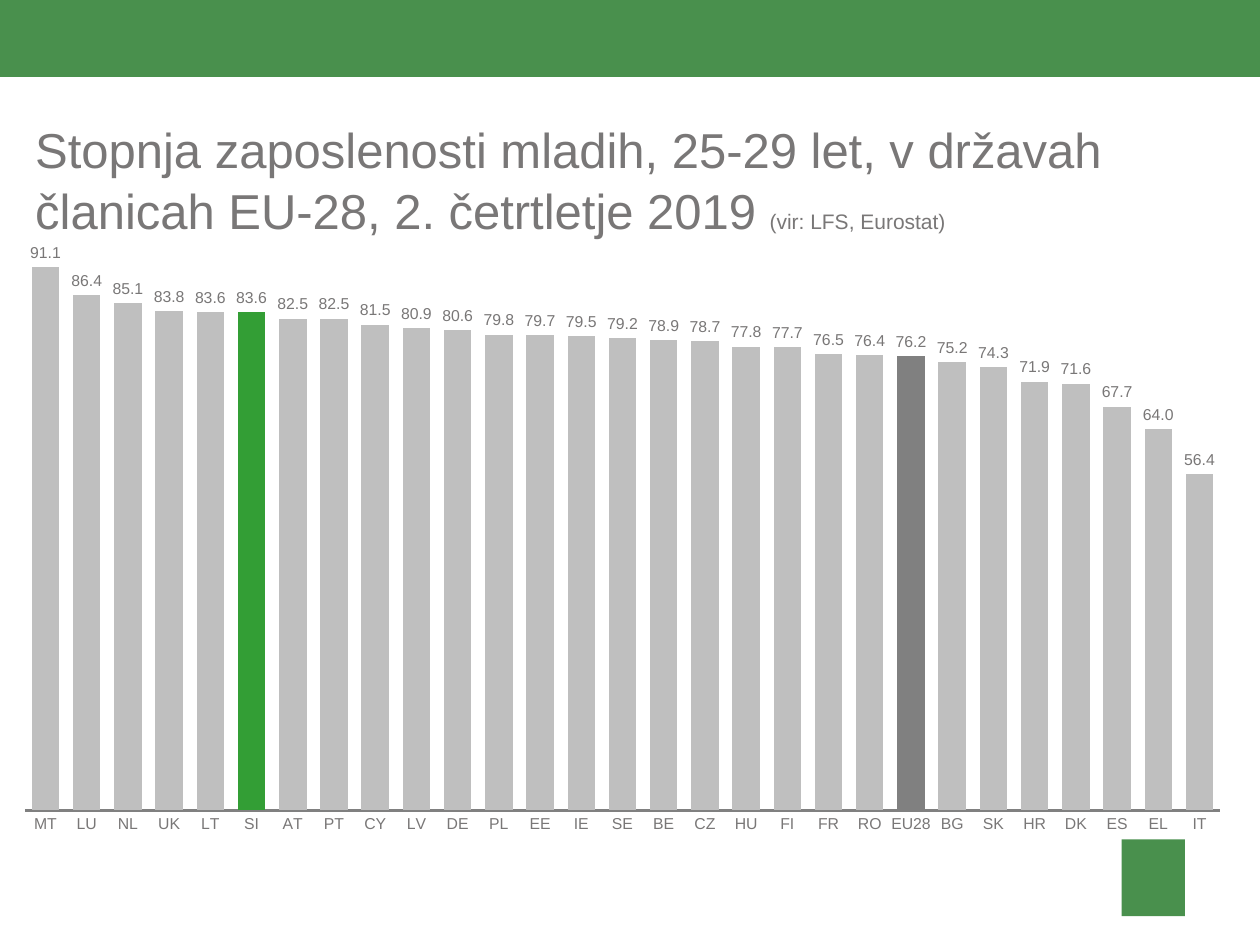
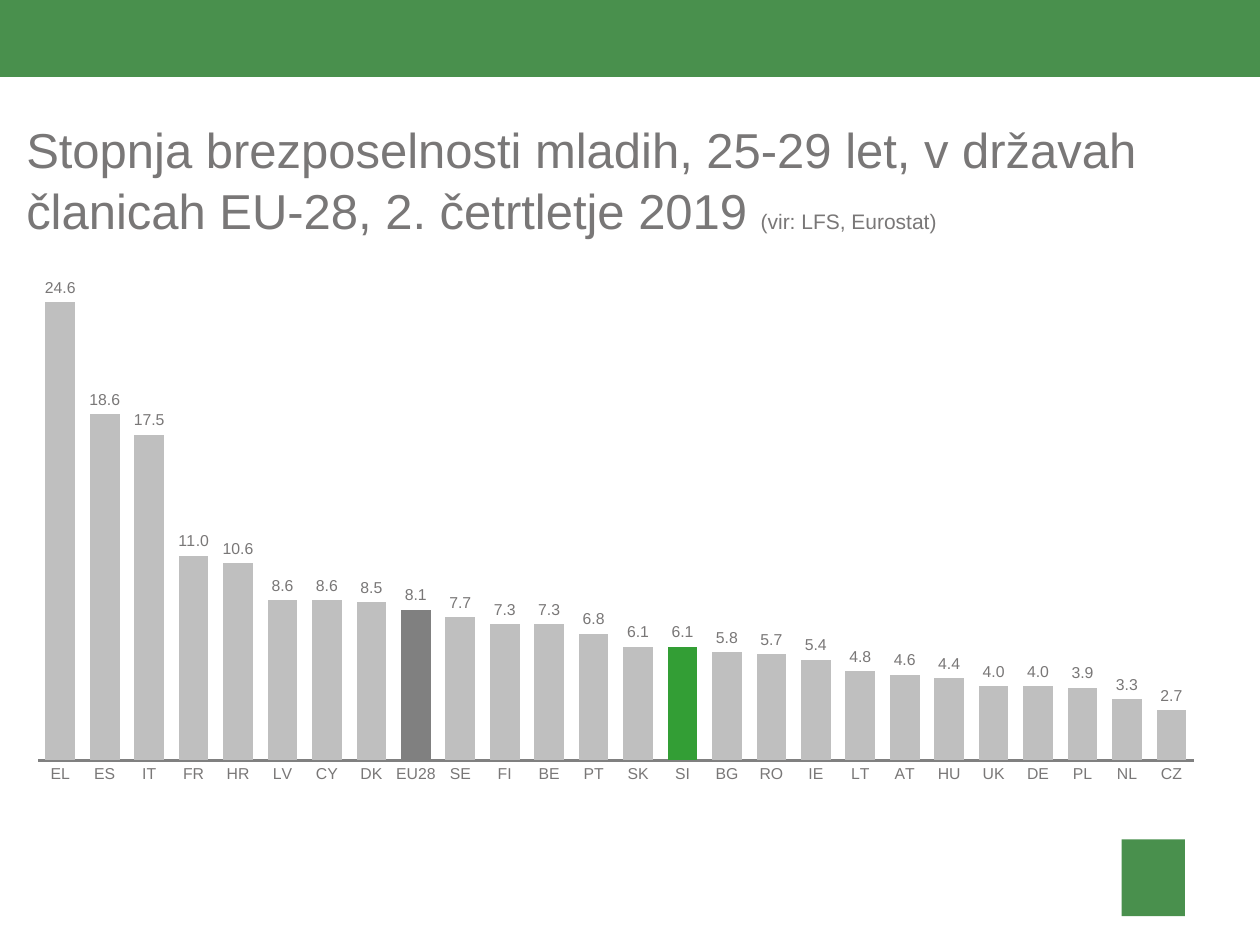
from collections import namedtuple

from pptx import Presentation
from pptx.chart.data import CategoryChartData
from pptx.dml.color import RGBColor
from pptx.enum.chart import XL_CHART_TYPE, XL_LABEL_POSITION, XL_TICK_LABEL_POSITION, XL_TICK_MARK
from pptx.enum.shapes import MSO_SHAPE
from pptx.enum.text import MSO_ANCHOR, MSO_AUTO_SIZE, PP_ALIGN
from pptx.oxml import parse_xml
from pptx.oxml.ns import nsdecls
from pptx.util import Cm, Pt

Box = namedtuple("Box", "left top width height")

FONT = "Arial"
BRAND_GREEN = "49904D"
TEXT_GREY = "797777"
BAR_GREY = "BFBFBF"
AXIS_GREY = "808080"
HIGHLIGHTS = {"SI": "339E35", "EU28": "808080"}
NUMBER_FORMAT = "#,##0.0"
SOURCE = "(vir: LFS, Eurostat)"
BAND_BOX = Box(0, -0.03, 25.4, 1.58)
EMBLEM_BOX = Box(22.61, 16.92, 1.28, 1.55)

EMPLOYMENT = {
    "MT": 91.1, "LU": 86.4, "NL": 85.1, "UK": 83.8, "LT": 83.6, "SI": 83.6,
    "AT": 82.5, "PT": 82.5, "CY": 81.5, "LV": 80.9, "DE": 80.6, "PL": 79.8,
    "EE": 79.7, "IE": 79.5, "SE": 79.2, "BE": 78.9, "CZ": 78.7, "HU": 77.8,
    "FI": 77.7, "FR": 76.5, "RO": 76.4, "EU28": 76.2, "BG": 75.2, "SK": 74.3,
    "HR": 71.9, "DK": 71.6, "ES": 67.7, "EL": 64.0, "IT": 56.4,
}
UNEMPLOYMENT = {
    "EL": 24.6, "ES": 18.6, "IT": 17.5, "FR": 11.0, "HR": 10.6, "LV": 8.6,
    "CY": 8.6, "DK": 8.5, "EU28": 8.1, "SE": 7.7, "FI": 7.3, "BE": 7.3,
    "PT": 6.8, "SK": 6.1, "SI": 6.1, "BG": 5.8, "RO": 5.7, "IE": 5.4,
    "LT": 4.8, "AT": 4.6, "HU": 4.4, "UK": 4.0, "DE": 4.0, "PL": 3.9,
    "NL": 3.3, "CZ": 2.7,
}


def color(hex_code):
    """Turn a hex string into a colour."""
    return RGBColor.from_string(hex_code)


def lengths(box):
    """Turn a box in centimetres into lengths."""
    return [Cm(value) for value in box]


def style_font(font, size):
    """Apply the shared typeface and text colour at the given size."""
    font.name = FONT
    font.size = Pt(size)
    font.color.rgb = color(TEXT_GREY)


def add_layout_block(page, layout, box, kind, number):
    """Draw a green block and move it to the layout, behind its placeholders."""
    block = page.shapes.add_shape(kind, *lengths(box))
    block.shadow.inherit = False
    block.fill.solid()
    block.fill.fore_color.rgb = color(BRAND_GREEN)
    block.line.fill.background()
    block.element.nvSpPr.cNvPr.id = number
    layout.shapes.element.insert(2, block.element)


def fill_title(page, box, heading):
    """Place the title and write the heading with its small source note."""
    title = page.shapes.title
    title.left, title.top, title.width, title.height = lengths(box)
    frame = title.text_frame
    frame.word_wrap = True
    frame.auto_size = MSO_AUTO_SIZE.NONE
    frame.vertical_anchor = MSO_ANCHOR.TOP
    frame.margin_left = frame.margin_right = frame.margin_top = frame.margin_bottom = 0
    para = frame.paragraphs[0]
    para.alignment = PP_ALIGN.LEFT
    para.line_spacing = 1.05
    for text, size in ((heading + " ", 28), (SOURCE, 12)):
        span = para.add_run()
        span.text = text
        style_font(span.font, size)


def set_plot_layout(chart, plot_box):
    """Fix the inner plot area as fractions of the chart."""
    area = chart.element.xpath(".//c:plotArea")[0]
    for existing in area.xpath("./c:layout"):
        area.remove(existing)
    places = "".join(
        f'<c:{tag} val="{value}"/>' for tag, value in zip(("x", "y", "w", "h"), plot_box)
    )
    area.insert(0, parse_xml(
        f'<c:layout {nsdecls("c")}><c:manualLayout><c:layoutTarget val="inner"/>'
        f'<c:xMode val="edge"/><c:yMode val="edge"/>{places}</c:manualLayout></c:layout>'
    ))


def style_axes(chart, maximum):
    """Show only the country names and the base line."""
    countries, rates = chart.category_axis, chart.value_axis
    for axis in (countries, rates):
        axis.has_major_gridlines = False
        axis.major_tick_mark = axis.minor_tick_mark = XL_TICK_MARK.NONE
    style_font(countries.tick_labels.font, 9)
    countries.format.line.color.rgb = color(AXIS_GREY)
    countries.format.line.width = Pt(1.5)
    rates.minimum_scale, rates.maximum_scale = 0, maximum
    rates.tick_labels.number_format = NUMBER_FORMAT
    rates.tick_labels.number_format_is_linked = False
    rates.tick_label_position = XL_TICK_LABEL_POSITION.NONE
    rates.format.line.fill.background()


def style_bars(chart, countries):
    """Colour the bars, pick out the highlighted ones and label their values."""
    plot = chart.plots[0]
    plot.gap_width = 50
    plot.vary_by_categories = False
    series = plot.series[0]
    series.format.fill.solid()
    series.format.fill.fore_color.rgb = color(BAR_GREY)
    for index, country in enumerate(countries):
        if country in HIGHLIGHTS:
            fill = series.points[index].format.fill
            fill.solid()
            fill.fore_color.rgb = color(HIGHLIGHTS[country])
    labels = series.data_labels
    labels.show_value = True
    labels.number_format = NUMBER_FORMAT
    labels.number_format_is_linked = False
    labels.position = XL_LABEL_POSITION.OUTSIDE_END
    style_font(labels.font, 9)


def add_rate_chart(page, box, rates, maximum, plot_box):
    """Add a column chart of the rates by country."""
    data = CategoryChartData()
    data.categories = list(rates)
    data.add_series("Series 1", list(rates.values()))
    chart = page.shapes.add_chart(XL_CHART_TYPE.COLUMN_CLUSTERED, *lengths(box), data).chart
    chart.has_title = False
    chart.has_legend = False
    style_font(chart.font, 10)
    set_plot_layout(chart, plot_box)
    style_axes(chart, maximum)
    style_bars(chart, rates)


def add_rate_page(deck, layout, subject, title_left, rates, chart_box, maximum, plot_box):
    """Add a page with a title and a chart of one rate."""
    page = deck.slides.add_slide(layout)
    heading = f"Stopnja {subject} mladih, 25-29 let, v državah članicah EU-28, 2. četrtletje 2019"
    fill_title(page, Box(title_left, 2.34, 23.52, 1.8), heading)
    add_rate_chart(page, chart_box, rates, maximum, plot_box)
    return page


def main():
    """Build and save the deck."""
    deck = Presentation()
    deck.slide_width, deck.slide_height = Cm(25.4), Cm(19.05)
    layout = deck.slide_layouts[5]
    page = add_rate_page(deck, layout, "zaposlenosti", 0.71, EMPLOYMENT,
                         Box(0, 4.06, 25.1, 13.06), 100, (0.02, 0.02, 0.96, 0.92))
    add_rate_page(deck, layout, "brezposelnosti", 0.53, UNEMPLOYMENT,
                  Box(0.53, 3.94, 23.77, 12.8), 30, (0.01, 0.01, 0.98, 0.88))
    add_layout_block(page, layout, EMBLEM_BOX, MSO_SHAPE.RECTANGLE, 101)
    add_layout_block(page, layout, BAND_BOX, MSO_SHAPE.RECTANGLE, 102)
    deck.save("out.pptx")


if __name__ == "__main__":
    main()
